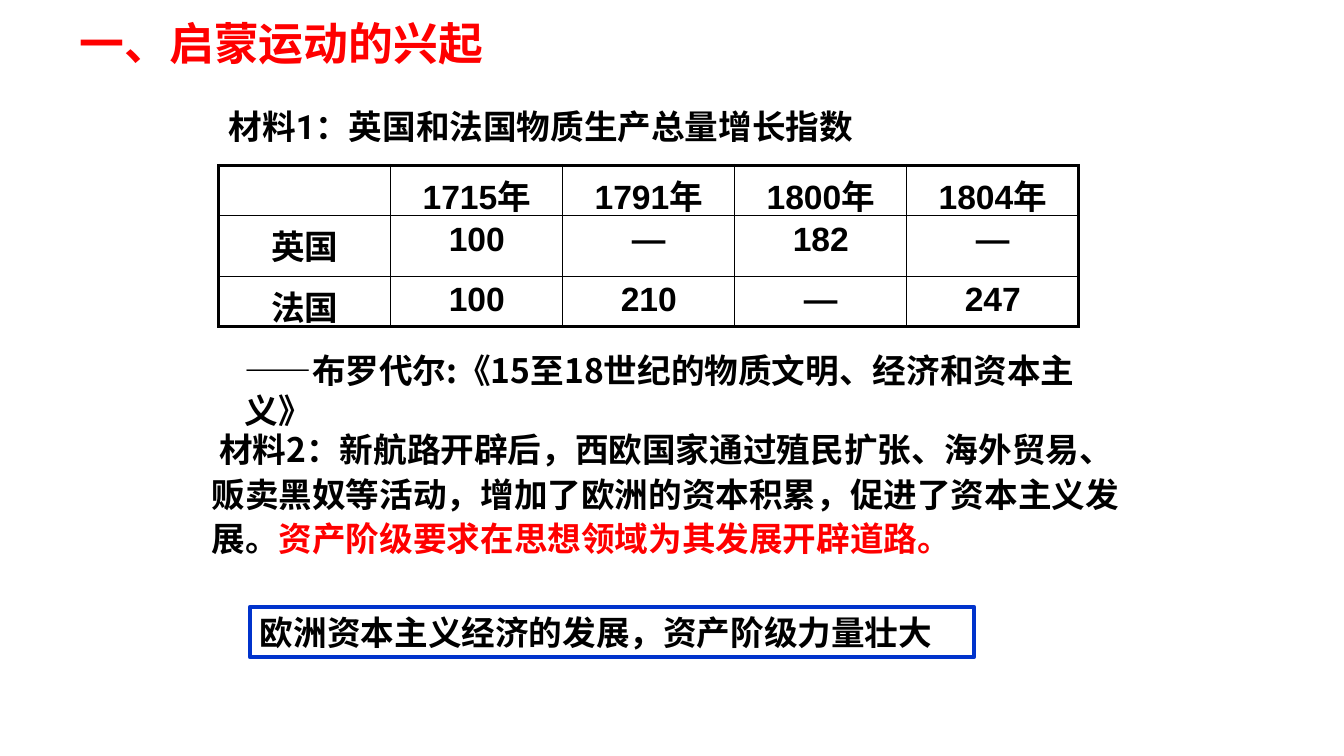
from lxml import etree
from pptx import Presentation
from pptx import util as u
from pptx.dml.color import RGBColor
from pptx.enum import shapes, text
from pptx.oxml.ns import qn

COLORS = {"ink": "000000", "accent": "FF0000", "frame": "0033CC"}
TABLE_ROWS = [
    ["", "1715年", "1791年", "1800年", "1804年"],
    ["英国", "100", "—", "182", "—"],
    ["法国", "100", "210", "—", "247"],
]
ROW_HEIGHTS = [0.5, 0.6, 0.5]
OUTER, INNER = 2.25, 1


def color(name):
    return RGBColor.from_string(COLORS[name])


class SlideBuilder:
    """Holds the text style and the current slide."""

    def __init__(self, page, size=24):
        self.page = page
        self.size = size

    def add_spans(self, frame, spans, font="Arial", size=None):
        para = frame.paragraphs[0]
        for words, tint in spans:
            span = para.add_run()
            span.text = words
            span.font.name = font
            span.font.size = u.Pt(size or self.size)
            span.font.bold = True
            span.font.color.rgb = color(tint)
        return para

    def title(self, area, words):
        box = self.page.shapes.title
        box.left, box.top, box.width, box.height = map(u.Inches, area)
        frame = box.text_frame
        frame.auto_size = text.MSO_AUTO_SIZE.NONE
        frame.vertical_anchor = text.MSO_ANCHOR.TOP
        para = self.add_spans(frame, [(words, "accent")], size=32)
        para.alignment = text.PP_ALIGN.LEFT

    def text(self, area, spans, font):
        box = self.page.shapes.add_textbox(*map(u.Inches, area))
        box.text_frame.word_wrap = True
        return self.add_spans(box.text_frame, spans, font)

    def framed(self, area, words):
        box = self.page.shapes.add_shape(
            shapes.MSO_SHAPE.RECTANGLE, *map(u.Inches, area))
        box.shadow.inherit = False
        box.fill.background()
        box.line.color.rgb = color("frame")
        box.line.width = u.Pt(3)
        box.text_frame.word_wrap = True
        box.text_frame.vertical_anchor = text.MSO_ANCHOR.MIDDLE
        para = self.add_spans(box.text_frame, [(words, "ink")])
        para.alignment = text.PP_ALIGN.LEFT

    def border(self, cell, widths):
        props = cell._tc.get_or_add_tcPr()
        for index, (side, width) in enumerate(widths.items()):
            line = etree.Element(qn(f"a:ln{side}"), w=str(u.Pt(width)))
            fill = etree.SubElement(line, qn("a:solidFill"))
            etree.SubElement(fill, qn("a:srgbClr"), val=COLORS["ink"])
            props.insert(index, line)

    def table(self, area, rows, heights):
        last_row, last_col = len(rows) - 1, len(rows[0]) - 1
        table = self.page.shapes.add_table(
            len(rows), len(rows[0]), *map(u.Inches, area)).table
        table.first_row = table.horz_banding = False
        for r, (row, height) in enumerate(zip(rows, heights)):
            table.rows[r].height = u.Inches(height)
            for c, words in enumerate(row):
                cell = table.cell(r, c)
                cell.fill.background()
                if words:
                    para = self.add_spans(cell.text_frame, [(words, "ink")])
                    para.alignment = text.PP_ALIGN.CENTER
                self.border(cell, {
                    "L": OUTER if c == 0 else INNER,
                    "R": OUTER if c == last_col else INNER,
                    "T": OUTER if r == 0 else INNER,
                    "B": OUTER if r == last_row else INNER,
                })


def main():
    deck = Presentation()
    deck.slide_width, deck.slide_height = u.Inches(13.33), u.Inches(7.5)
    slide = SlideBuilder(deck.slides.add_slide(deck.slide_layouts[5]))

    # Heading
    slide.title((0.69, 0.11, 8.74, 1.17), "一、启蒙运动的兴起")

    # Material 1: growth index table and its citation
    slide.text((2.17, 1, 7, 0.5),
               [("材料1：英国和法国物质生产总量增长指数", "ink")], "Roboto")
    slide.table((2.17, 1.64, 8.53, 1.6), TABLE_ROWS, ROW_HEIGHTS)
    slide.text((2.33, 3.42, 9.07, 0.5),
               [("——布罗代尔:《15至18世纪的物质文明、经济和资本主义》", "ink")],
               "Noto Sans CJK SC")

    # Material 2: the rise of the bourgeoisie
    para = slide.text((2, 4.17, 9.29, 1.42), [
        (" 材料2：新航路开辟后，西欧国家通过殖民扩张、海外贸易、贩卖黑奴等活动，"
         "增加了欧洲的资本积累，促进了资本主义发展。", "ink"),
        ("资产阶级要求在思想领域为其发展开辟道路。", "accent"),
    ], "Noto Sans CJK SC")
    para.line_spacing = 1.1

    # Conclusion
    slide.framed((2.48, 6.02, 7.18, 0.5), "欧洲资本主义经济的发展，资产阶级力量壮大")

    deck.save("out.pptx")


if __name__ == "__main__":
    main()
